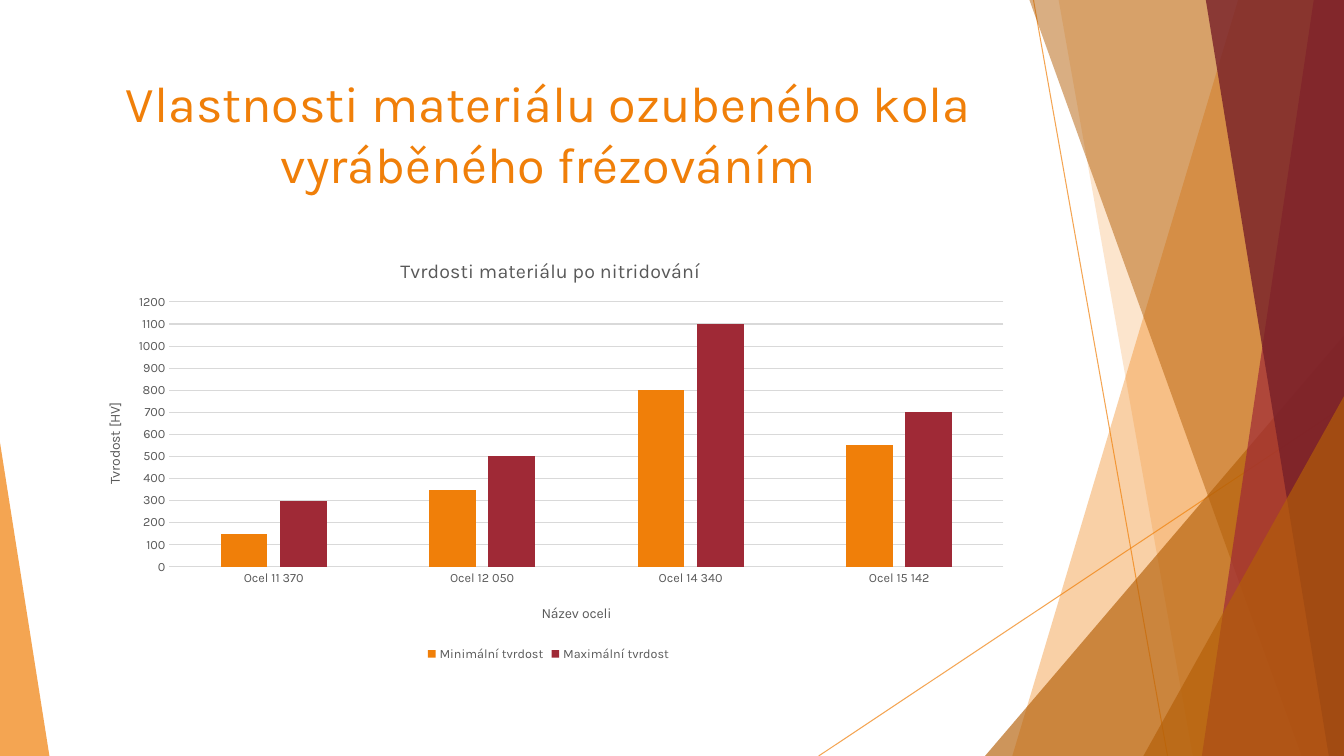
from lxml import etree
from pptx import Presentation
from pptx.chart.data import CategoryChartData
from pptx.dml.color import RGBColor
from pptx.enum import chart as ch
from pptx.enum import shapes, text
from pptx.oxml import parse_xml
from pptx.oxml.ns import nsdecls, qn
from pptx.util import Inches, Pt

FONT = "Karla"
ORANGE = RGBColor(0xF0, 0x7F, 0x09)
BROWN = RGBColor(0xB4, 0x5F, 0x07)
RED = RGBColor(0x9F, 0x29, 0x36)
DARK_RED = RGBColor(0x77, 0x1F, 0x28)
GREY = RGBColor(0x59, 0x59, 0x59)
GRID = RGBColor(0xD9, 0xD9, 0xD9)

WIDTH, HEIGHT = 13.33, 7.5


def set_alpha(fill_parent, percent):
    color = fill_parent.find(".//" + qn("a:srgbClr"))
    etree.SubElement(color, qn("a:alpha")).set("val", str(percent * 1000))


def style_shape(shape, color, opacity):
    shape.shadow.inherit = False
    shape.fill.solid()
    shape.fill.fore_color.rgb = color
    shape.line.fill.background()
    set_alpha(shape.fill._xPr, opacity)


def add_thin_line(slide, start, end):
    line = slide.shapes.add_connector(
        shapes.MSO_CONNECTOR.STRAIGHT, *(Inches(value) for value in start + end))
    line.line.color.rgb = ORANGE
    line.line.width = Pt(0.75)
    properties = line._element.spPr
    set_alpha(properties, 70)
    etree.SubElement(properties, qn("a:effectLst"))


def add_band(slide, top_left, bottom_left, color, opacity):
    """Full-height band with a slanted left edge, reaching the right slide edge."""
    builder = slide.shapes.build_freeform(Inches(top_left), 0)
    corners = [(WIDTH, 0), (WIDTH, HEIGHT), (bottom_left, HEIGHT)]
    builder.add_line_segments([(Inches(x), Inches(y)) for x, y in corners])
    style_shape(builder.convert_to_shape(), color, opacity)


def add_triangle(slide, left, top, width, apex, color, opacity):
    """Triangle standing on the bottom slide edge."""
    shape = slide.shapes.add_shape(
        shapes.MSO_SHAPE.ISOSCELES_TRIANGLE,
        Inches(left), Inches(top), Inches(width), Inches(HEIGHT - top))
    shape.adjustments[0] = apex
    style_shape(shape, color, opacity)


def add_title(slide, wording):
    box = slide.shapes.add_textbox(Inches(0.74), Inches(0.67), Inches(9.4), Inches(1.44))
    frame = box.text_frame
    frame.word_wrap = True
    frame.vertical_anchor = text.MSO_ANCHOR.TOP
    frame.text = wording
    paragraph = frame.paragraphs[0]
    paragraph.alignment = text.PP_ALIGN.CENTER
    style_font(paragraph.runs[0].font, 36, ORANGE)


def style_font(font, size, color):
    font.name = FONT
    font.size = Pt(size)
    font.bold = False
    font.color.rgb = color


def set_layout(element, inner=False, **fractions):
    """Place a chart part by fractions of the chart's size."""
    for old in element.findall(qn("c:layout")):
        element.remove(old)
    target = '<c:layoutTarget val="inner"/>' if inner else ""
    modes = '<c:xMode val="edge"/><c:yMode val="edge"/>'
    values = "".join(f'<c:{key} val="{value}"/>' for key, value in fractions.items())
    layout = parse_xml(f'<c:layout {nsdecls("c")}><c:manualLayout>'
                       f"{target}{modes}{values}</c:manualLayout></c:layout>")
    before = element.find(qn("c:tx"))
    element.insert(0 if before is None else element.index(before) + 1, layout)


def add_caption(owner, title, wording, size, x, y):
    """Fill and place the title of a chart or of an axis."""
    owner.has_title = True
    title.text_frame.text = wording
    style_font(title.text_frame.paragraphs[0].runs[0].font, size, GREY)
    set_layout(title._element, x=x, y=y)


def style_axis(axis):
    axis.major_tick_mark = axis.minor_tick_mark = ch.XL_TICK_MARK.NONE
    style_font(axis.tick_labels.font, 9, GREY)


def add_hardness_chart(slide):
    data = CategoryChartData()
    data.categories = ["Ocel 11 370", "Ocel 12 050", "Ocel 14 340", "Ocel 15 142"]
    data.add_series("Minimální tvrdost", [150, 350, 800, 550])
    data.add_series("Maximální tvrdost", [300, 500, 1100, 700])
    chart = slide.shapes.add_chart(
        ch.XL_CHART_TYPE.COLUMN_CLUSTERED,
        Inches(0.74), Inches(2.36), Inches(9.4), Inches(4.24), data).chart
    style_font(chart.font, 10, GREY)

    # Columns
    plot = chart.plots[0]
    plot.vary_by_categories = False
    plot.gap_width, plot.overlap = 219, -27
    for series, color in zip(plot.series, (ORANGE, RED)):
        series.format.fill.solid()
        series.format.fill.fore_color.rgb = color
    set_layout(chart._chartSpace.chart.plotArea, inner=True, x=0.1, y=0.15, w=0.88, h=0.62)

    # Axes
    category_axis, value_axis = chart.category_axis, chart.value_axis
    style_axis(category_axis)
    style_axis(value_axis)
    value_axis.minimum_scale, value_axis.maximum_scale = 0, 1200
    value_axis.major_unit = 100
    value_axis.format.line.fill.background()
    for line in (category_axis.format.line, value_axis.major_gridlines.format.line):
        line.color.rgb = GRID
        line.width = Pt(0.75)

    # Captions and legend
    add_caption(chart, chart.chart_title, "Tvrdosti materiálu po nitridování", 14, 0.34, 0.04)
    add_caption(category_axis, category_axis.axis_title, "Název oceli", 10, 0.49, 0.85)
    add_caption(value_axis, value_axis.axis_title, "Tvrodost [HV]", 10, 0.03, 0.38)
    chart.has_legend = True
    chart.legend.position = ch.XL_LEGEND_POSITION.BOTTOM
    chart.legend.include_in_layout = False
    style_font(chart.legend.font, 9, GREY)


def add_decoration(slide):
    add_thin_line(slide, (10.25, 0), (11.58, HEIGHT))
    add_thin_line(slide, (WIDTH, 4.03), (8.12, HEIGHT))
    add_band(slide, 12.28, 10.04, ORANGE, 36)
    add_band(slide, 10.5, 11.83, ORANGE, 20)
    add_triangle(slide, 9.77, 3.33, 3.56, 1, BROWN, 66)
    add_band(slide, 10.21, 12.91, BROWN, 50)
    add_band(slide, 13.03, 11.92, RED, 70)
    add_band(slide, 11.96, 13.18, DARK_RED, 80)
    add_triangle(slide, 11.34, 3.93, 1.99, 1, BROWN, 66)
    add_triangle(slide, 0, 4.39, 0.49, 0, ORANGE, 70)


def main():
    presentation = Presentation()
    presentation.slide_width = Inches(WIDTH)
    presentation.slide_height = Inches(HEIGHT)
    slide = presentation.slides.add_slide(presentation.slide_layouts[6])
    add_decoration(slide)
    add_title(slide, "Vlastnosti materiálu ozubeného kola vyráběného frézováním")
    add_hardness_chart(slide)
    presentation.save("out.pptx")


if __name__ == "__main__":
    main()
